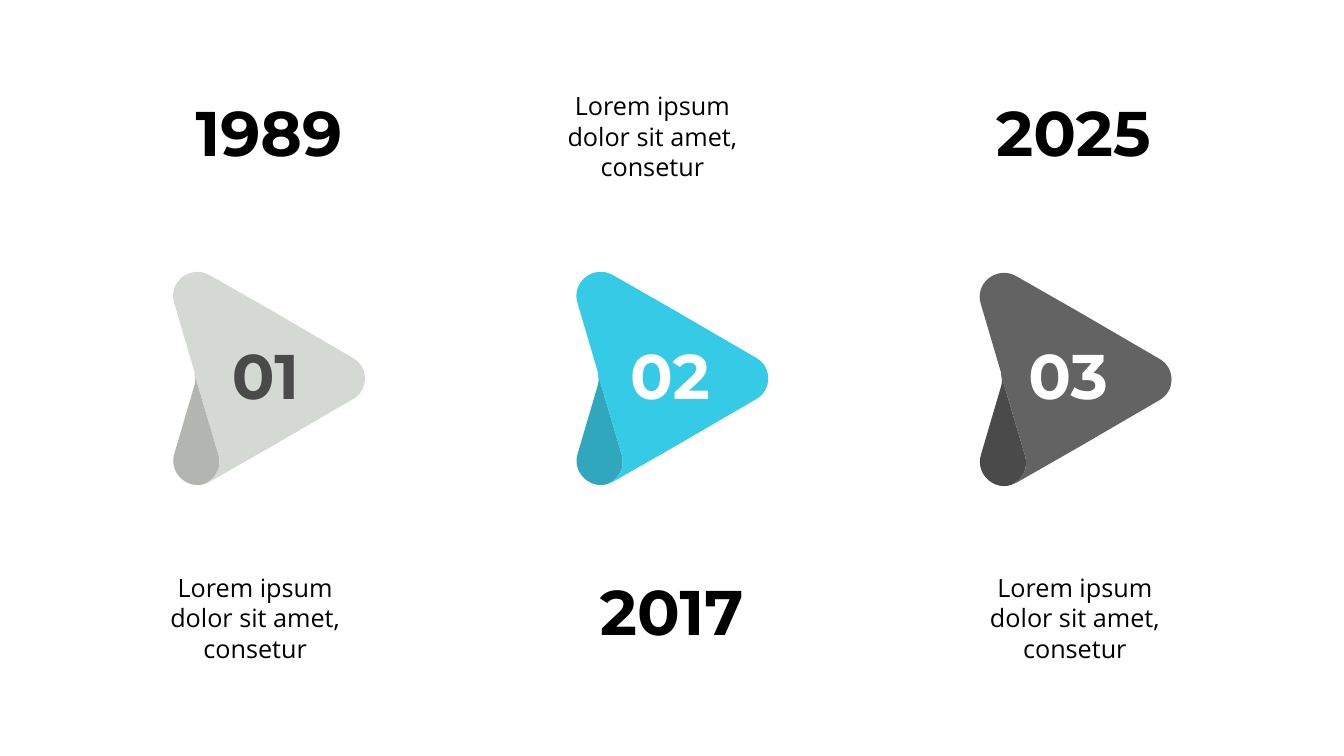
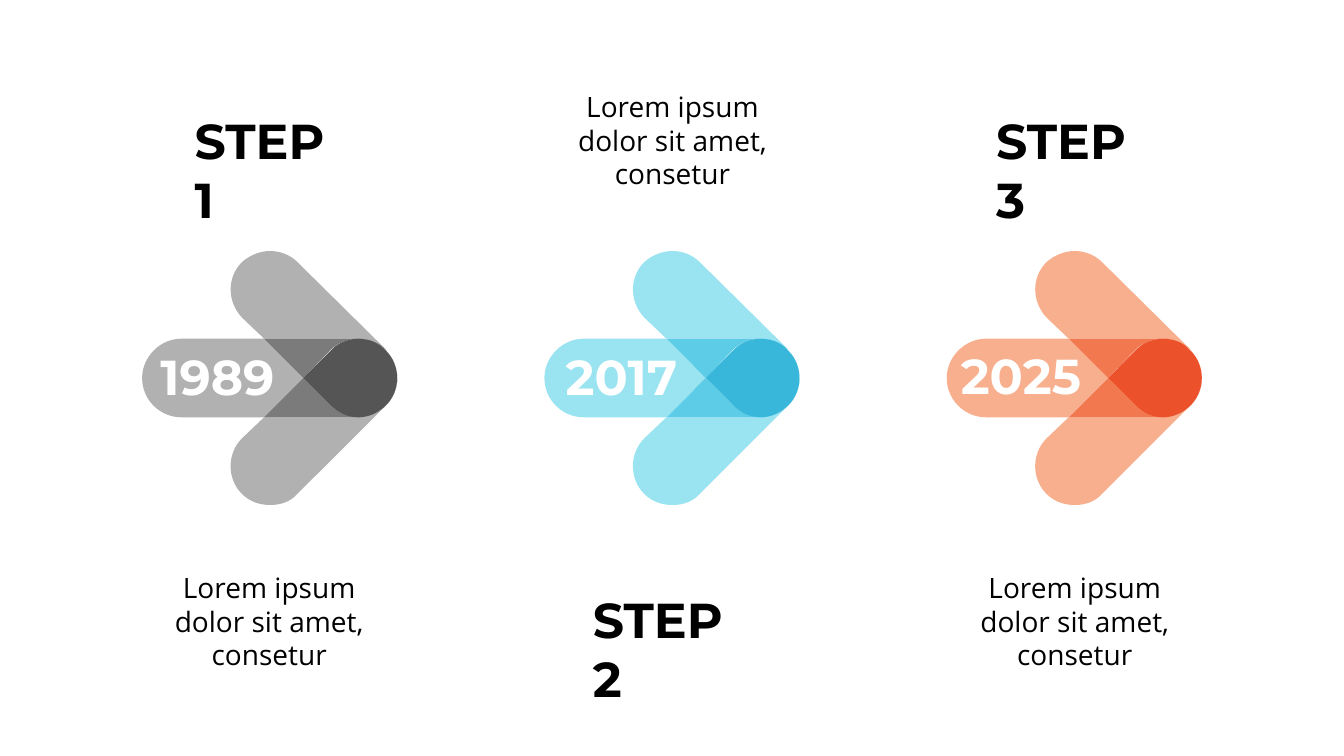
from pptx import Presentation
from pptx.dml.color import RGBColor
from pptx.enum.text import MSO_ANCHOR, MSO_AUTO_SIZE, PP_ALIGN
from pptx.oxml.ns import qn
from pptx.util import Pt

PX = 9144  # EMU per px, 100 px to the inch
HEADING, BODY = "Montserrat", "Open Sans"
BLACK, WHITE = "000000", "FFFFFF"
LOREM = "Lorem ipsum dolor sit amet, consetur"


def rgb(value):
    return RGBColor.from_string(value)


class Deck:
    """Holds the style and the current slide."""

    def __init__(self):
        self.prs = Presentation()
        self.prs.slide_width, self.prs.slide_height = 1333 * PX, 750 * PX
        self.s = None

    def new_slide(self):
        self.s = self.prs.slides.add_slide(self.prs.slide_layouts[6])

    def outline(self, x, y, contours, color):
        """Draw contours of points (two numbers) and cubic curves (six)."""
        fb = None
        for contour in contours:
            points = [((x + part[n]) * PX, (y + part[n + 1]) * PX)
                      for part in contour for n in range(0, len(part), 2)]
            if fb is None:
                fb = self.s.shapes.build_freeform(*points[0])
            else:
                fb.move_to(*points[0])
            fb.add_line_segments(points[1:], close=True)
        sp = fb.convert_to_shape()
        # Join the three segments of each curve into one
        segments = iter(list(sp._element.iter(qn("a:lnTo"))))
        for part in (part for contour in contours for part in contour[1:]):
            curve = next(segments)
            if len(part) == 6:
                curve.tag = qn("a:cubicBezTo")
                for extra in (next(segments), next(segments)):
                    curve.append(extra[0])
                    extra.getparent().remove(extra)
        sp.shadow.inherit = False
        sp.fill.solid()
        sp.fill.fore_color.rgb = rgb(color)
        sp.line.fill.background()

    def text(self, x, y, w, h, text, size, color=BLACK, font=HEADING):
        sp = self.s.shapes.add_textbox(x * PX, y * PX, w * PX, h * PX)
        tf = sp.text_frame
        tf.word_wrap = True
        tf.auto_size = MSO_AUTO_SIZE.SHAPE_TO_FIT_TEXT
        tf.vertical_anchor = MSO_ANCHOR.TOP
        tf.text = text
        p = tf.paragraphs[0]
        f = p.runs[0].font
        f.name, f.size, f.color.rgb = font, Pt(size), rgb(color)
        if font == HEADING:
            f.bold = True
            tf.margin_left = tf.margin_top = tf.margin_right = tf.margin_bottom = 0
        else:
            p.alignment = PP_ALIGN.CENTER

    def description(self, x, y, w, h, size):
        self.text(x, y, w, h, LOREM, size, font=BODY)


# Folded pointer, measured from the left edge of its column
FOLD = [[(51, 452), (27, 371), (28, 375, 28, 379, 27, 382), (7, 450),
         (1, 469, 20, 486, 37, 480), (48, 475, 54, 464, 51, 452)]]
POINTER = [[(37, 480), (39, 479, 40, 479, 42, 478), (105, 442), (184, 396),
            (200, 387, 200, 364, 184, 355), (105, 309), (42, 273),
            (23, 262, 0, 280, 7, 301), (27, 369), (27, 371), (51, 452),
            (54, 464, 48, 475, 37, 480)]]

# Three-bar arrow, measured from the left edge of its column
LOWER_ARM = [[(240, 404), (233, 410, 224, 414, 214, 414), (121, 414), (99, 435),
              (84, 450, 84, 475, 99, 490), (107, 498, 117, 501, 127, 501),
              (137, 501, 147, 498, 154, 490)]]
BAR = [[(242, 348), (249, 355, 253, 365, 253, 375),
        (253, 385, 249, 395, 242, 402), (240, 404),
        (248, 397, 253, 387, 253, 375), (253, 364, 249, 355, 242, 348)],
       [(121, 336), (39, 336), (18, 336, 0, 354, 0, 375),
        (0, 397, 18, 414, 39, 414), (121, 414), (160, 375)]]
LOWER_OVERLAP = [[(253, 375), (253, 385, 249, 395, 242, 402),
                  (234, 410, 224, 413, 214, 413), (205, 413, 195, 410, 187, 402),
                  (160, 375), (121, 414), (214, 414),
                  (224, 414, 233, 410, 240, 404), (242, 402),
                  (249, 395, 253, 385, 253, 375)]]
UPPER_ARM = [[(127, 249), (117, 249, 107, 253, 99, 260),
              (84, 275, 84, 299, 99, 315), (121, 336), (212, 336),
              (213, 336, 213, 336, 214, 336), (224, 336, 234, 340, 242, 347),
              (154, 260), (147, 253, 137, 249, 127, 249)]]
TIP_EDGE = [[(212, 336), (214, 336), (225, 336, 235, 340, 242, 347),
             (234, 340, 224, 336, 214, 336)]]
UPPER_OVERLAP = [[(212, 336), (121, 336), (160, 375), (187, 347),
                  (194, 340, 203, 337, 212, 336)]]
TIP = [[(214, 336), (212, 336), (203, 337, 194, 340, 187, 348), (160, 375),
        (187, 402), (195, 410, 205, 414, 214, 414),
        (224, 414, 234, 410, 242, 402), (249, 395, 253, 385, 253, 375),
        (253, 365, 249, 355, 242, 348), (235, 340, 225, 336, 214, 336)]]


def pointer_slide(deck):
    deck.new_slide()
    # number, x, width, colour; fold, face; year, x, width; description x
    columns = [
        ("01", 230, 107, "4A4A4A", "B2B5B0", "D5D9D3", "1989", 194, 184, 134),
        ("02", 625, 120, WHITE, "31A7BD", "35CAE6", "2017", 595, 183, 528),
        ("03", 1020, 119, WHITE, "4A4A4A", "636363", "2025", 988, 197, 947)]
    for i, (number, nx, nw, ink, fold, face, year, yx, yw, dx) in enumerate(columns):
        x, y = 166 + 400 * i, i // 2
        deck.outline(x, y, FOLD, fold)
        deck.outline(x, y, POINTER, face)
        deck.text(nx, 334, nw, 93, number, 45, ink)
        low = i % 2
        deck.text(yx, 568 if low else 93, yw, 93, year, 45)
        deck.description(dx, 85 if low else 563, 238, 101, 18)


def arrow_slide(deck):
    deck.new_slide()
    # light, middle and dark tone; year, x, y, width; step x, width; description x
    columns = [
        ("B1B1B1", "7B7B7B", "555555", "1989", 159, 344, 141, 193, 159, 149),
        ("9AE4F2", "5DCCE6", "38B7DA", "2017", 561, 344, 139, 588, 169, 549),
        ("F8AF8E", "F1784F", "EB522C", "2025", 953, 343, 150, 988, 168, 948)]
    for i, (light, mid, dark, year, yx, yy, yw, sx, sw, dx) in enumerate(columns):
        # Arrow
        for part, color in ((LOWER_ARM, light), (BAR, light), (LOWER_OVERLAP, mid),
                            (UPPER_ARM, light), (TIP_EDGE, mid),
                            (UPPER_OVERLAP, mid), (TIP, dark)):
            deck.outline(141 + 399 * i, 0, part, color)
        # Texts
        deck.text(yx, yy, yw, 71, year, 35, WHITE)
        low = i % 2
        deck.text(sx, 585 if low else 110, sw, 59, f"STEP {i + 1}", 35)
        deck.description(dx, 84 if low else 561, 236, 111, 20)


def main():
    deck = Deck()
    pointer_slide(deck)
    arrow_slide(deck)
    deck.prs.save("out.pptx")


if __name__ == "__main__":
    main()
